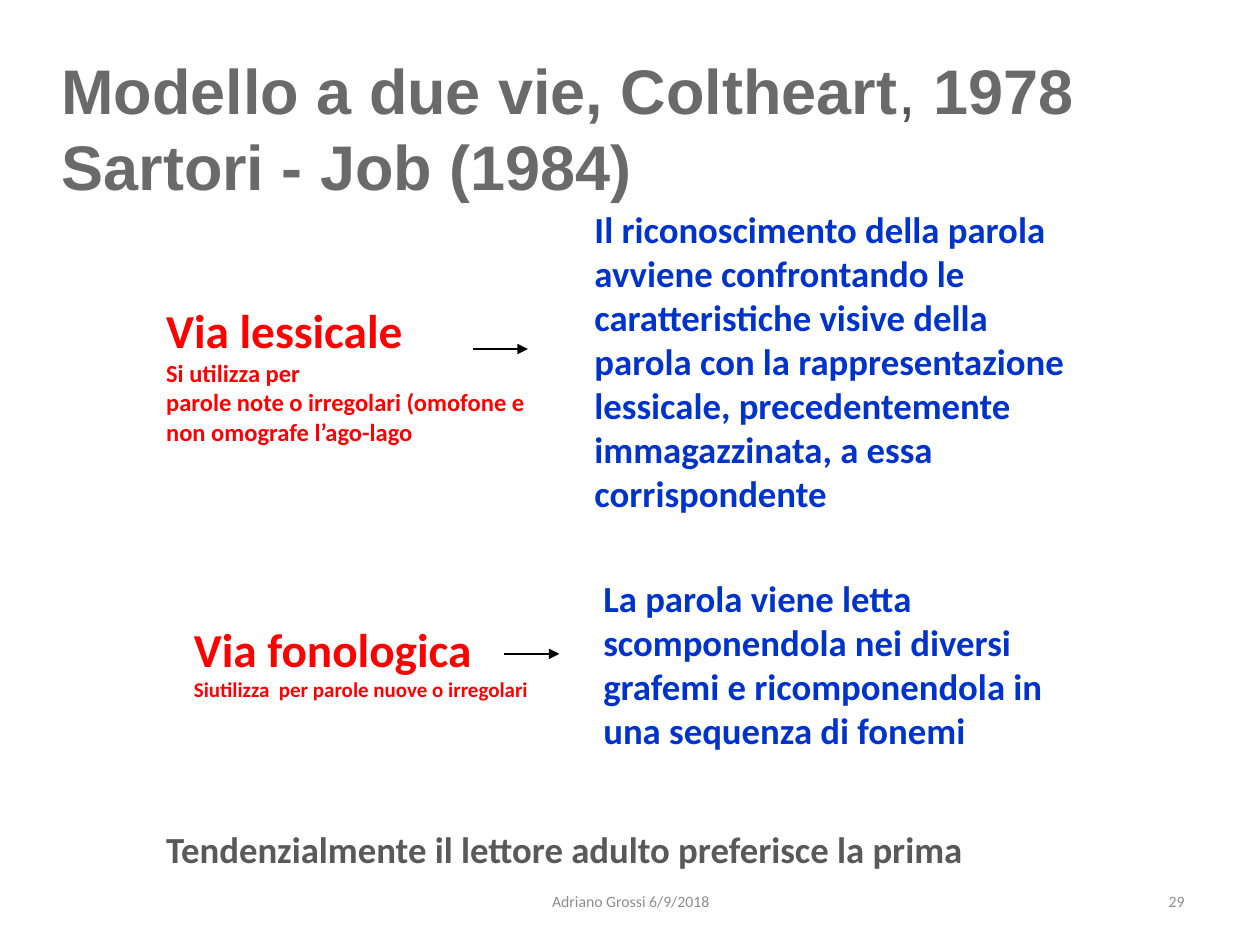
"""Build the slide on the two reading routes."""
from dataclasses import dataclass
from typing import NamedTuple

from lxml import etree
from pptx import Presentation
from pptx.dml.color import RGBColor
from pptx.enum.shapes import MSO_CONNECTOR
from pptx.enum.text import MSO_ANCHOR, MSO_AUTO_SIZE, PP_ALIGN
from pptx.oxml.ns import qn
from pptx.util import Inches, Pt

LEFT, MID, RIGHT = PP_ALIGN.LEFT, PP_ALIGN.CENTER, PP_ALIGN.RIGHT
TOP, CENTRE = MSO_ANCHOR.TOP, MSO_ANCHOR.MIDDLE
GROW, FIXED = MSO_AUTO_SIZE.SHAPE_TO_FIT_TEXT, MSO_AUTO_SIZE.NONE
STRAIGHT = MSO_CONNECTOR.STRAIGHT
WIDE, HIGH = Inches(10), Inches(7.5)


class Style(NamedTuple):
    """Look of a run of text."""
    size: float
    color: str
    bold: bool = True
    font: str = "Calibri"


@dataclass(frozen=True)
class Theme:
    """Colours and type sizes of the slide."""
    title: Style = Style(36, "6A6A6A", font="Arial")
    comma: Style = Style(36, "545454", False, "Arial")
    route: Style = Style(27, "FF0000")
    use: Style = Style(14, "FF0000")
    small: Style = Style(12, "FF0000")
    body: Style = Style(21, "0033CC")
    close: Style = Style(21, "595959")
    foot: Style = Style(9, "8C8C8C", False)
    line: str = "000000"
    weight: float = 0.75


THEME = Theme()


class Area(NamedTuple):
    """Place of an item in percent of the slide's width and height."""
    left: float
    top: float
    width: float
    height: float = 0


class Run(NamedTuple):
    """Piece of text with its style."""
    text: str
    style: Style


@dataclass(frozen=True)
class Block:
    """Text box made of paragraphs of runs."""
    area: Area
    paras: list[list[Run]]
    wrap: bool = True
    fit: MSO_AUTO_SIZE = GROW
    align: PP_ALIGN = LEFT
    anchor: MSO_ANCHOR = TOP


BLOCKS = [
    Block(Area(12.2, 31.2, 31.9, 16.8), [
        [Run("Via lessicale", THEME.route)],
        [Run("Si utilizza per", THEME.use)],
        [Run("parole note o irregolari (omofone e non omografe l’ago-lago", THEME.use)],
    ]),
    Block(Area(46.2, 21.2, 40, 34.27), [[Run(
        "Il riconoscimento della parola avviene confrontando le caratteristiche "
        "visive della parola con la rappresentazione lessicale, precedentemente "
        "immagazzinata, a essa corrispondente", THEME.body)]]),
    Block(Area(14.4, 64.93, 28.9, 10.13), [
        [Run("Via fonologica", THEME.route)],
        [Run("Siutilizza  per parole nuove o irregolari", THEME.small)],
    ], wrap=False),
    Block(Area(46.9, 60.27, 40, 20.13), [[Run(
        "La parola viene letta scomponendola nei diversi grafemi e "
        "ricomponendola in una sequenza di fonemi", THEME.body)]]),
    Block(Area(3.9, 4.8, 84.5, 17.47), [
        [Run("Modello a due vie, Coltheart", THEME.title),
         Run(", ", THEME.comma), Run("1978", THEME.title)],
        [Run("Sartori - Job (1984)", THEME.title)],
    ], wrap=False),
    Block(Area(12.2, 86.8, 77.2, 6), [
        [Run("Tendenzialmente il lettore adulto preferisce la prima", THEME.close)]]),
    Block(Area(34.2, 92.67, 31.7, 5.33), [[Run("Adriano Grossi 6/9/2018", THEME.foot)]],
          fit=FIXED, align=MID, anchor=CENTRE),
    Block(Area(71.7, 92.67, 23.3, 5.33), [[Run("29", THEME.foot)]],
          fit=FIXED, align=RIGHT, anchor=CENTRE),
]
ARROWS = [Area(37.5, 36.93, 4.4), Area(40, 69.2, 4.4)]


def scale(area: Area) -> tuple[int, int, int, int]:
    """Turn percent shares into slide lengths."""
    sides = (WIDE, HIGH, WIDE, HIGH)
    left, top, width, height = (round(s * p / 100) for s, p in zip(sides, area))
    return left, top, width, height


def add_text(slide, block: Block) -> None:
    """Draw one text box."""
    frame = slide.shapes.add_textbox(*scale(block.area)).text_frame
    frame.word_wrap = block.wrap
    frame.auto_size = block.fit
    frame.vertical_anchor = block.anchor
    for i, runs in enumerate(block.paras):
        para = frame.add_paragraph() if i else frame.paragraphs[0]
        para.alignment = block.align
        for text, style in runs:
            run = para.add_run()
            run.text = text
            font = run.font
            font.name, font.size, font.bold = style.font, Pt(style.size), style.bold
            font.color.rgb = RGBColor.from_string(style.color)


def add_arrow(slide, area: Area) -> None:
    """Draw one level arrow pointing right."""
    left, top, width, height = scale(area)
    arrow = slide.shapes.add_connector(STRAIGHT, left, top, left + width, top + height)
    arrow.line.color.rgb = RGBColor.from_string(THEME.line)
    arrow.line.width = Pt(THEME.weight)
    props = arrow.line._get_or_add_ln()
    etree.SubElement(props, qn("a:tailEnd"), type="triangle")
    etree.SubElement(props.getparent(), qn("a:effectLst"))


def main() -> None:
    """Build and save the slide."""
    deck = Presentation()
    deck.slide_width, deck.slide_height = WIDE, HIGH
    slide = deck.slides.add_slide(deck.slide_layouts[6])
    for block in BLOCKS:
        add_text(slide, block)
    for area in ARROWS:
        add_arrow(slide, area)
    deck.save("out.pptx")


if __name__ == "__main__":
    main()
